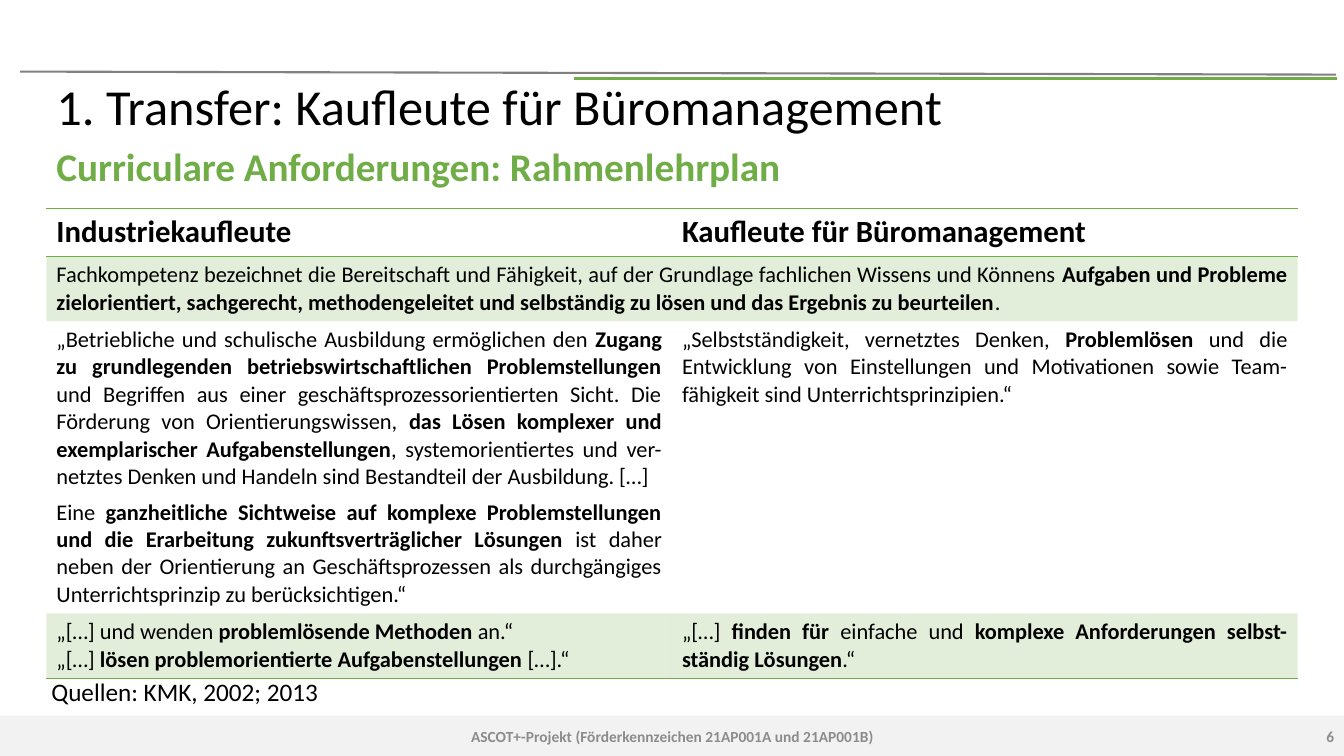
from dataclasses import dataclass

from lxml import etree
from pptx import Presentation
from pptx import util as u
from pptx.dml.color import RGBColor
from pptx.enum import shapes, text
from pptx.oxml import ns

GREEN, GRAY, BLACK = "70AD47", "8C8C8C", "000000"
FONT = "Calibri"
NO_GRID_STYLE = "{2D5ABB26-0587-4C30-8999-92F81FD0307C}"
LEFT, CENTER = text.PP_ALIGN.LEFT, text.PP_ALIGN.CENTER
RIGHT, JUSTIFY = text.PP_ALIGN.RIGHT, text.PP_ALIGN.JUSTIFY


@dataclass
class Box:
    """Left, top, width and height in percent of the slide's size."""
    left: float
    top: float
    width: float
    height: float


@dataclass
class Rule:
    """A straight line between two points given in percent."""
    x1: float
    y1: float
    x2: float
    y2: float
    color: str
    points: float


@dataclass
class Label:
    box: Box
    words: str
    size: float
    color: str
    bold: bool = False
    align: text.PP_ALIGN = LEFT
    anchor: text.MSO_ANCHOR = text.MSO_ANCHOR.MIDDLE
    wrap: bool = True


@dataclass
class Row:
    """Cells hold paragraphs; ** switches bold on and off."""
    height: float
    cells: list[list[str]]
    size: float = 16
    aligns: tuple = (JUSTIFY, JUSTIFY)
    shaded: bool = False
    borders: tuple = ()
    anchor: text.MSO_ANCHOR = text.MSO_ANCHOR.TOP


TITLE = Label(Box(3.45, 10.53, 91.52, 7.87), "1. Transfer: Kaufleute für Büromanagement", 36, BLACK)
SUBTITLE = Label(Box(3.45, 18.8, 92.27, 79.07), "Curriculare Anforderungen: Rahmenlehrplan",
                 28, GREEN, True, anchor=text.MSO_ANCHOR.TOP)
FOOTER_BAND = Box(0, 94.67, 100, 5.33)
HEADER_RULES = [Rule(1.5, 9.47, 99.4, 9.87, "808080", 1.5),
                Rule(42.69, 10.4, 99.47, 10.4, GREEN, 2.25)]
LABELS = [
    Label(Box(33.16, 94.67, 33.76, 5.33), "ASCOT+-Projekt (Förderkennzeichen 21AP001A und 21AP001B)",
          11, GRAY, True, CENTER),
    Label(Box(77.49, 94.67, 22.51, 5.33), "6", 11, GRAY, True, RIGHT),
    Label(Box(3.08, 88.8, 21.6, 5.33), "Quellen: KMK, 2002; 2013", 18, BLACK,
          anchor=text.MSO_ANCHOR.TOP, wrap=False),
]
CURRICULUM_BOX = Box(3.45, 27.6, 93.1, 61.6)
CURRICULUM = [
    Row(6.27, [["**Industriekaufleute**"], ["**Kaufleute für Büromanagement**"]], 22, (LEFT, LEFT),
        borders=("a:lnT", "a:lnB"), anchor=text.MSO_ANCHOR.MIDDLE),
    Row(8.4, [[
        "Fachkompetenz bezeichnet die Bereitschaft und Fähigkeit, auf der Grundlage fachlichen "
        "Wissens und Könnens **Aufgaben und Probleme zielorientiert, sachgerecht, "
        "methodengeleitet und selbständig zu lösen und das Ergebnis zu beurteilen**."]], shaded=True),
    Row(38.4, [[
        "„Betriebliche und schulische Ausbildung ermöglichen den **Zugang zu grundlegenden "
        "betriebswirtschaftlichen Problemstellungen **und Begriffen aus einer "
        "geschäftsprozessorientierten Sicht. Die Förderung von Orientierungswissen, **das Lösen "
        "komplexer und exemplarischer Aufgabenstellungen**, systemorientiertes und ver-netztes "
        "Denken und Handeln sind Bestandteil der Ausbildung. […]",
        "Eine **ganzheitliche Sichtweise auf komplexe Problemstellungen und die Erarbeitung "
        "zukunftsverträglicher Lösungen **ist daher neben der Orientierung an Geschäftsprozessen "
        "als durchgängiges Unterrichtsprinzip zu berücksichtigen.“",
    ], [
        "„Selbstständigkeit, vernetztes Denken, **Problemlösen** und die Entwicklung von "
        "Einstellungen und Motivationen sowie Team-fähigkeit sind Unterrichtsprinzipien.“"]]),
    Row(8.53, [[
        "„[…] und wenden **problemlösende Methoden **an.“",
        "„[…] **lösen problemorientierte Aufgabenstellungen **[…].“",
    ], [
        "„[…] **finden für **einfache und **komplexe Anforderungen selbst-ständig Lösungen**.“"]],
        aligns=(LEFT, JUSTIFY), shaded=True, borders=("a:lnB",)),
]

deck = Presentation()
deck.slide_width, deck.slide_height = u.Inches(13.33), u.Inches(7.5)


def across(percent: float) -> int:
    return round(deck.slide_width * percent / 100)


def down(percent: float) -> int:
    return round(deck.slide_height * percent / 100)


def place(box: Box) -> tuple[int, int, int, int]:
    return across(box.left), down(box.top), across(box.width), down(box.height)


def rgb(color: str) -> RGBColor:
    return RGBColor.from_string(color)


def set_font(font, size: float, color: str) -> None:
    font.name, font.size = FONT, u.Pt(size)
    font.color.rgb = rgb(color)


def write_label(shape, label: Label) -> None:
    shape.left, shape.top, shape.width, shape.height = place(label.box)
    frame = shape.text_frame
    frame.text = label.words
    frame.word_wrap, frame.vertical_anchor = label.wrap, label.anchor
    frame.auto_size = text.MSO_AUTO_SIZE.NONE if label.wrap else text.MSO_AUTO_SIZE.SHAPE_TO_FIT_TEXT
    line = frame.paragraphs[0]
    line.alignment = label.align
    if shape.is_placeholder:
        line.line_spacing, line.space_before = 0.9, u.Pt(0)
        properties = line._p.get_or_add_pPr()
        if label is SUBTITLE:
            properties.set("marL", str(u.Inches(0.25)))
            properties.set("indent", str(u.Inches(-0.25)))
            etree.SubElement(properties, ns.qn("a:buNone"))
    set_font(line.font, label.size, label.color)
    line.font.bold = label.bold


def draw_rule(slide, rule: Rule) -> None:
    line = slide.shapes.add_connector(shapes.MSO_CONNECTOR.STRAIGHT, across(rule.x1), down(rule.y1),
                                      across(rule.x2), down(rule.y2))
    line.line.color.rgb, line.line.width = rgb(rule.color), u.Pt(rule.points)
    etree.SubElement(line._element.spPr, ns.qn("a:effectLst"))


def fill_cell(cell, paragraphs: list[str], row: Row, align: text.PP_ALIGN) -> None:
    cell.vertical_anchor = row.anchor
    frame = cell.text_frame
    for index, marked in enumerate(paragraphs):
        line = frame.add_paragraph() if index else frame.paragraphs[0]
        line.alignment = align
        if index < len(paragraphs) - 1 and align == JUSTIFY:
            line.space_after = u.Pt(6)
        set_font(line.font, row.size, BLACK)
        for part, words in enumerate(marked.split("**")):
            if words:
                run = line.add_run()
                run.text, run.font.bold = words, part % 2 == 1


def paint_cell(cell, row: Row) -> None:
    properties = cell._tc.get_or_add_tcPr()
    for side in row.borders:
        edge = etree.SubElement(properties, ns.qn(side), w=str(u.Pt(1)))
        solid = etree.SubElement(edge, ns.qn("a:solidFill"))
        etree.SubElement(solid, ns.qn("a:srgbClr"), val=GREEN)
    if row.shaded:
        cell.fill.solid()
        cell.fill.fore_color.rgb = rgb(GREEN)
        tint = properties.find(".//" + ns.qn("a:solidFill") + "[last()]/" + ns.qn("a:srgbClr")) \
            if not row.borders else properties.find(ns.qn("a:solidFill"))[0]
        etree.SubElement(tint, ns.qn("a:alpha"), val="20000")
    else:
        cell.fill.background()


def draw_curriculum(slide) -> None:
    table = slide.shapes.add_table(len(CURRICULUM), 2, *place(CURRICULUM_BOX)).table
    table.first_row = table.horz_banding = False
    table._tbl.tblPr.find(ns.qn("a:tableStyleId")).text = NO_GRID_STYLE
    for index, row in enumerate(CURRICULUM):
        table.rows[index].height = down(row.height)
        if len(row.cells) == 1:
            table.cell(index, 0).merge(table.cell(index, 1))
        for column, paragraphs in enumerate(row.cells):
            fill_cell(table.cell(index, column), paragraphs, row, row.aligns[column])
        for column in range(2):
            paint_cell(table.cell(index, column), row)


def main() -> None:
    slide = deck.slides.add_slide(deck.slide_layouts[1])
    band = slide.shapes.add_shape(shapes.MSO_SHAPE.RECTANGLE, *place(FOOTER_BAND))
    band.shadow.inherit = False
    band.fill.solid()
    band.fill.fore_color.rgb = rgb("F2F2F2")
    band.line.fill.background()
    for rule in HEADER_RULES:
        draw_rule(slide, rule)
    write_label(slide.shapes.title, TITLE)
    write_label(slide.placeholders[1], SUBTITLE)
    draw_curriculum(slide)
    for label in LABELS:
        write_label(slide.shapes.add_textbox(*place(label.box)), label)
    deck.save("out.pptx")


if __name__ == "__main__":
    main()
